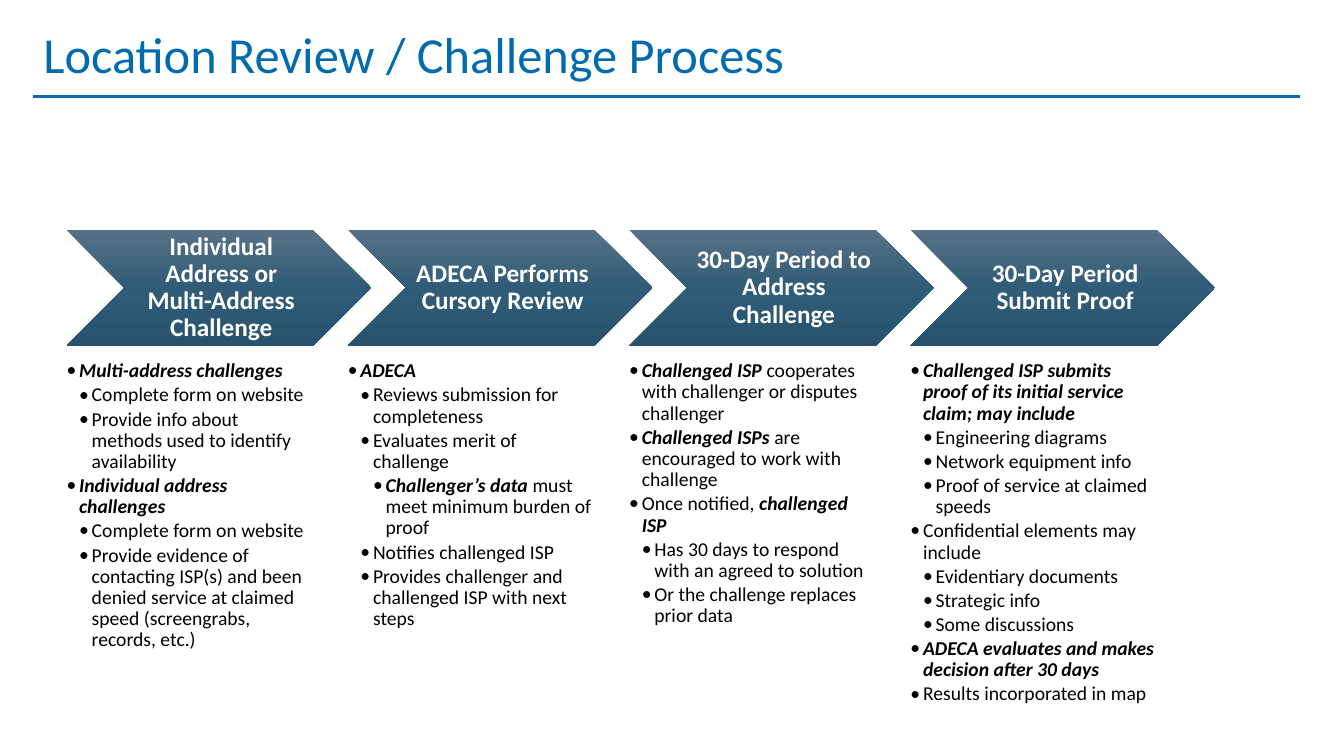
from dataclasses import dataclass
from copy import deepcopy

from lxml import etree
from pptx import Presentation
from pptx import util as u
from pptx.dml.color import RGBColor
from pptx.enum import shapes, text
from pptx.oxml import ns


@dataclass(frozen=True)
class Theme:
    """Colours, font and type sizes of the slide."""
    font: str = "Calibri"
    accent: RGBColor = RGBColor(0x00, 0x6B, 0xAE)
    ink: RGBColor = RGBColor(0, 0, 0)
    white: RGBColor = RGBColor(255, 255, 255)
    chevron: tuple = ("577185", "305C77", "28526D")
    title_size: int = 36
    step_size: int = 18
    list_size: int = 14
    spacing: float = 0.9


THEME = Theme()

STEPS = [
    ("Individual Address or Multi-Address Challenge", [
        (0, "*Multi-address challenges*"),
        (1, "Complete form on website"),
        (1, "Provide info about methods used to identify availability"),
        (0, "*Individual address challenges*"),
        (1, "Complete form on website"),
        (1, "Provide evidence of contacting ISP(s) and been denied service "
            "at claimed speed (screengrabs, records, etc.)"),
    ]),
    ("ADECA Performs Cursory Review", [
        (0, "*ADECA*"),
        (1, "Reviews submission for completeness"),
        (1, "Evaluates merit of challenge"),
        (2, "*Challenger’s data *must meet minimum burden of proof"),
        (1, "Notifies challenged ISP"),
        (1, "Provides challenger and challenged ISP with next steps"),
    ]),
    ("30-Day Period to Address Challenge", [
        (0, "*Challenged ISP *cooperates with challenger or disputes challenger"),
        (0, "*Challenged ISPs *are encouraged to work with challenge"),
        (0, "Once notified, *challenged ISP*"),
        (1, "Has 30 days to respond with an agreed to solution"),
        (1, "Or the challenge replaces prior data"),
    ]),
    ("30-Day Period Submit Proof", [
        (0, "*Challenged ISP submits proof of its initial service claim; may include*"),
        (1, "Engineering diagrams"),
        (1, "Network equipment info"),
        (1, "Proof of service at claimed speeds"),
        (0, "Confidential elements may include"),
        (1, "Evidentiary documents"),
        (1, "Strategic info"),
        (1, "Some discussions"),
        (0, "*ADECA evaluates and makes decision after 30 days*"),
        (0, "Results incorporated in map"),
    ]),
]


def place(s, left, top, width, height):
    """Move a shape to a box given in inches."""
    s.left, s.top = u.Inches(left), u.Inches(top)
    s.width, s.height = u.Inches(width), u.Inches(height)


def set_frame(tf, anchor, insets):
    """Set wrapping, anchor and insets (left, top, right, bottom)."""
    tf.word_wrap = True
    tf.auto_size = text.MSO_AUTO_SIZE.NONE
    tf.vertical_anchor = anchor
    tf.margin_left, tf.margin_top, tf.margin_right, tf.margin_bottom = map(u.Inches, insets)


def set_paragraph(p, align, after=0):
    """Set alignment and spacing of a paragraph."""
    p.alignment = align
    p.line_spacing = THEME.spacing
    p.space_before = u.Pt(0)
    p.space_after = u.Pt(after)


def add_run(p, words, size, color, bold=False, italic=False):
    """Add one formatted run."""
    r = p.add_run()
    r.text = words
    r.font.name, r.font.size = THEME.font, u.Pt(size)
    r.font.bold, r.font.italic = bold, italic
    r.font.color.rgb = color


def add_heading(slide, left, top, width, height):
    """Fill the title placeholder and draw the rule through its box."""
    s = slide.shapes.title
    place(s, left, top, width, height)
    set_frame(s.text_frame, text.MSO_ANCHOR.TOP, (0.1, 0.05, 0.1, 0.05))
    p = s.text_frame.paragraphs[0]
    set_paragraph(p, text.PP_ALIGN.LEFT)
    add_run(p, "Location Review / Challenge Process", THEME.title_size, THEME.accent)
    y = u.Inches(top + 0.71)
    rule = slide.shapes.add_connector(
        shapes.MSO_CONNECTOR.STRAIGHT, u.Inches(left), y, u.Inches(left + 12.56), y)
    rule.line.color.rgb = THEME.accent
    rule.line.width = u.Pt(2.25)
    etree.SubElement(rule._element.spPr, ns.qn("a:effectLst"))


def fill_gradient(s, colors):
    """Fill a shape from top to bottom with evenly spaced colours."""
    s.fill.gradient()
    s.fill.gradient_angle = 270
    stop_list = s._element.spPr.find(".//" + ns.qn("a:gsLst"))
    while len(stop_list) < len(colors):
        stop_list.append(deepcopy(stop_list[0]))
    for i, (stop, color) in enumerate(zip(s.fill.gradient_stops, colors)):
        stop.position = i / (len(colors) - 1)
        stop.color.rgb = RGBColor.from_string(color)


def add_step(slide, label, left, top, width, height):
    """Draw one chevron with its label."""
    s = slide.shapes.add_shape(
        shapes.MSO_SHAPE.CHEVRON, *map(u.Inches, (left, top, width, height)))
    s.shadow.inherit = False
    s.line.fill.background()
    fill_gradient(s, THEME.chevron)
    set_frame(s.text_frame, text.MSO_ANCHOR.MIDDLE, (0.08, 0.03, 0.03, 0.03))
    p = s.text_frame.paragraphs[0]
    set_paragraph(p, text.PP_ALIGN.CENTER)
    add_run(p, label, THEME.step_size, THEME.white, bold=True)


def set_bullet(p, level):
    """Indent a paragraph by its level and give it a round bullet."""
    p.level = level
    step = u.Inches(0.125)
    pPr = p._p.get_or_add_pPr()
    pPr.set("marL", str(step * (level + 1)))
    pPr.set("indent", str(-step))
    etree.SubElement(pPr, ns.qn("a:buFont"), typeface=THEME.font)
    etree.SubElement(pPr, ns.qn("a:buChar"), char="•")


def add_details(s, items, left, top, width, height):
    """Fill a body placeholder with a list; starred words are emphasised."""
    place(s, left, top, width, height)
    tf = s.text_frame
    set_frame(tf, text.MSO_ANCHOR.TOP, (0, 0, 0, 0))
    for i, (level, words) in enumerate(items):
        p = tf.add_paragraph() if i else tf.paragraphs[0]
        set_paragraph(p, text.PP_ALIGN.LEFT, after=THEME.list_size * 0.15)
        set_bullet(p, level)
        for j, part in enumerate(words.split("*")):
            if part:
                strong = j % 2 == 1
                add_run(p, part, THEME.list_size, THEME.ink, strong, strong)


def add_process(slide, left, top, pitch):
    """Lay out the steps in a row, each above its details."""
    bodies = [s for s in slide.placeholders if s.placeholder_format.idx > 0]
    for i, (body, (label, items)) in enumerate(zip(bodies, STEPS)):
        x = left + i * pitch
        add_step(slide, label, x, top, 3.02, 1.15)
        add_details(body, items, x, top + 1.3, 2.42, 3.6)


def main():
    """Build and save the slide."""
    prs = Presentation()
    prs.slide_width, prs.slide_height = u.Inches(13.33), u.Inches(7.5)
    slide = prs.slides.add_slide(prs.slide_layouts.get_by_name("Comparison"))
    add_heading(slide, 0.33, 0.25, 11.5, 1.45)
    add_process(slide, 0.66, 2.28, 2.79)
    prs.save("out.pptx")


if __name__ == "__main__":
    main()
